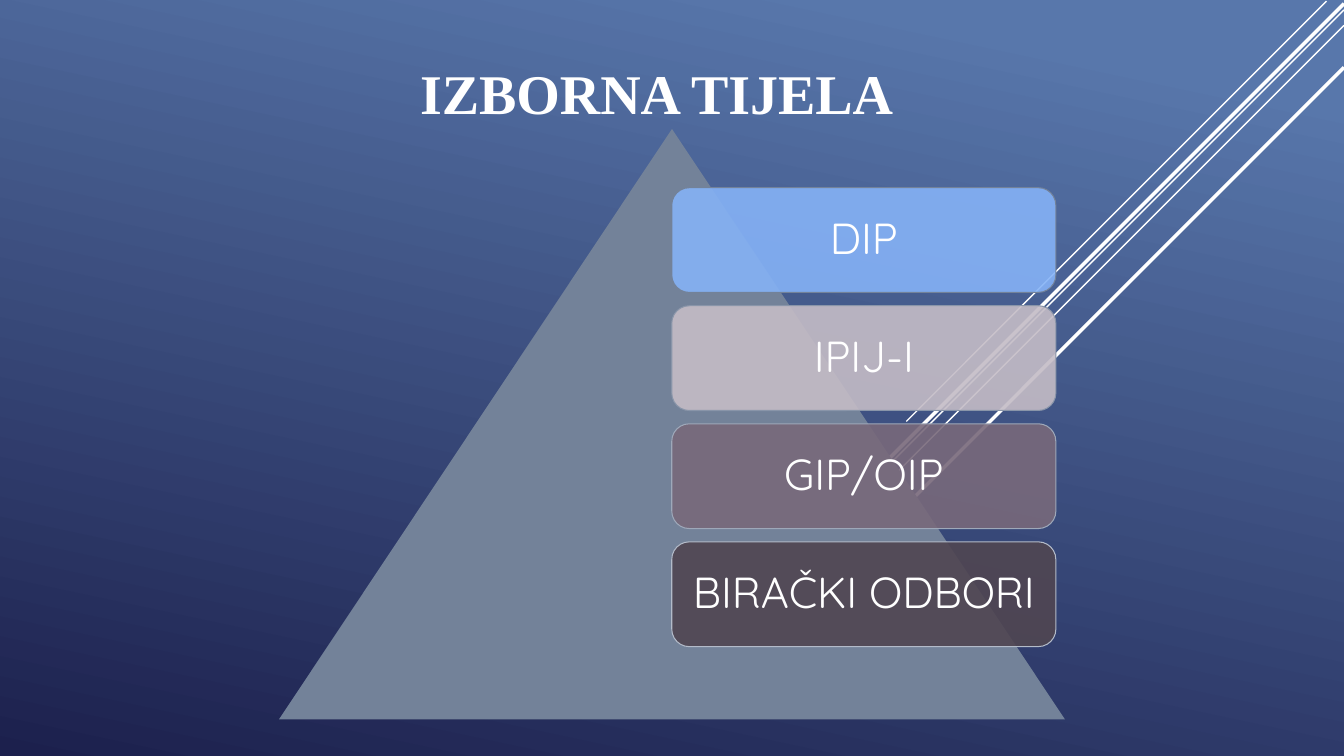
from lxml.etree import SubElement
from pptx import Presentation
from pptx.dml.color import RGBColor
from pptx.enum.shapes import MSO_CONNECTOR, MSO_SHAPE
from pptx.enum.text import MSO_ANCHOR, PP_ALIGN
from pptx.oxml.ns import qn
from pptx.util import Cm, Pt

WHITE = RGBColor(0xFF, 0xFF, 0xFF)
SKY = RGBColor(0x58, 0x77, 0xAB)
NIGHT = RGBColor(0x1C, 0x20, 0x4D)
SLATE = RGBColor(0x73, 0x82, 0x99)

BODIES = [
    ("DIP", RGBColor(0x85, 0xB2, 0xF6), SLATE),
    ("IPIJ-I", RGBColor(0xC4, 0xBC, 0xC6), RGBColor(0x89, 0x95, 0xA9)),
    ("GIP/OIP", RGBColor(0x78, 0x69, 0x7B), RGBColor(0x9E, 0xA8, 0xB9)),
    ("BIRAČKI ODBORI", RGBColor(0x50, 0x46, 0x52), RGBColor(0xB3, 0xBB, 0xC9)),
]

RAYS = [
    (33.43, 0.03, 10.59, 1),
    (33.87, 0.25, 16.89, 1),
    (33.87, 0.64, 13.77, 1),
    (33.87, 0.09, 13.48, 2.5),
    (33.87, 1.7, 12.07, 2.5),
]


def write(frame, text, font_name, size, bold=False):
    paragraph = frame.paragraphs[0]
    paragraph.alignment = PP_ALIGN.CENTER
    run = paragraph.add_run()
    run.text = text
    run.font.name = font_name
    run.font.size = Pt(size)
    run.font.bold = bold
    run.font.color.rgb = WHITE
    return paragraph


prs = Presentation()
prs.slide_width, prs.slide_height = Cm(33.87), Cm(19.05)
slide = prs.slides.add_slide(prs.slide_layouts[6])
shapes = slide.shapes

backdrop = slide.background.fill
backdrop.gradient()
backdrop.gradient_angle = 258
for stop, position, color in zip(backdrop.gradient_stops, (0.1, 1), (SKY, NIGHT)):
    stop.position = position
    stop.color.rgb = color

for x, y, reach, weight in RAYS:
    ray = shapes.add_connector(
        MSO_CONNECTOR.STRAIGHT, Cm(x), Cm(y), Cm(x - reach), Cm(y + reach))
    ray.line.color.rgb = WHITE
    ray.line.width = Pt(weight)
    SubElement(ray._element.spPr, qn("a:effectLst"))

title = shapes.add_textbox(Cm(0), Cm(0.48), Cm(33.1), Cm(2.82)).text_frame
title.word_wrap = True
title.vertical_anchor = MSO_ANCHOR.BOTTOM
write(title, "IZBORNA TIJELA", "Times New Roman", 40, bold=True)

pyramid = shapes.add_shape(
    MSO_SHAPE.ISOSCELES_TRIANGLE, Cm(7.03), Cm(3.25), Cm(19.81), Cm(14.88))
pyramid.shadow.inherit = False
pyramid.fill.solid()
pyramid.fill.fore_color.rgb = SLATE
pyramid.line.fill.background()

for level, (name, color, outline) in enumerate(BODIES):
    body = shapes.add_shape(
        MSO_SHAPE.ROUNDED_RECTANGLE,
        Cm(16.93), Cm(4.73 + 2.975 * level), Cm(9.68), Cm(2.64))
    body.shadow.inherit = False
    body.fill.solid()
    body.fill.fore_color.rgb = color
    tint = body._element.spPr.find(qn("a:solidFill"))[0]
    SubElement(tint, qn("a:alpha"), val="90000")
    body.line.color.rgb = outline
    body.line.width = Pt(0.75)
    frame = body.text_frame
    frame.word_wrap = True
    frame.vertical_anchor = MSO_ANCHOR.MIDDLE
    frame.margin_left = frame.margin_right = Cm(0.33)
    frame.margin_top = frame.margin_bottom = Cm(0.33)
    write(frame, name, "Quicksand", 31).line_spacing = 0.9

prs.save("out.pptx")
